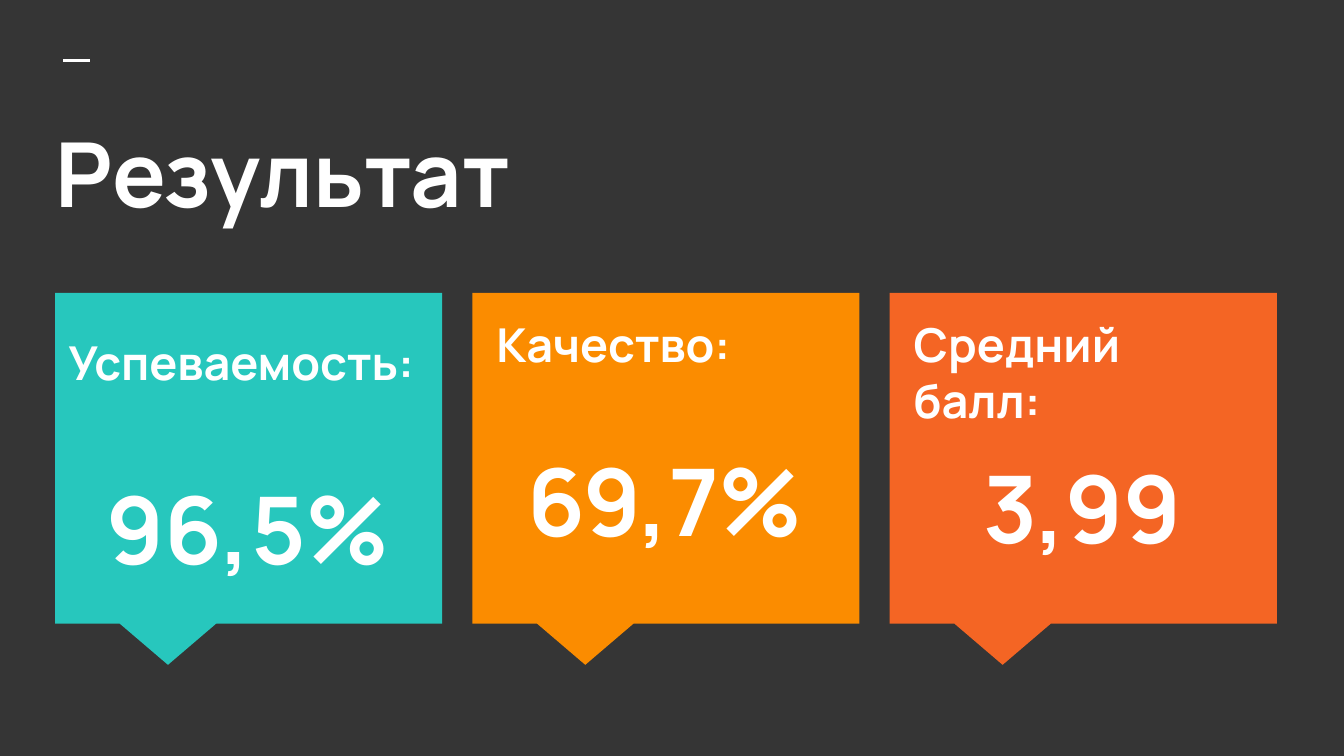
from dataclasses import dataclass

import pptx
import pptx.dml.color
import pptx.enum.shapes
import pptx.enum.text
import pptx.oxml
import pptx.oxml.ns
import pptx.util

Inches = pptx.util.Inches
Points = pptx.util.Pt
Align = pptx.enum.text.PP_ALIGN
Anchor = pptx.enum.text.MSO_ANCHOR


@dataclass(frozen=True)
class Theme:
    font: str = "Manrope"
    background: str = "353535"
    text: str = "FFFFFF"
    title_size: float = 48
    label_size: float = 25
    value_size: float = 50


@dataclass(frozen=True)
class Grid:
    """Row of equal cards between two edges, in inches."""
    left: float = 0.41
    right: float = 9.5
    top: float = 2.18
    width: float = 2.88
    height: float = 2.46
    columns: int = 3

    def column_left(self, column: int) -> float:
        pitch = (self.right - self.left - self.width) / (self.columns - 1)
        return self.left + column * pitch


@dataclass(frozen=True)
class Card:
    label: str
    value: str
    fill: str
    value_gap: float  # points between the label and the value
    text_in_callout: bool = False


THEME = Theme()
GRID = Grid()
CARDS = (
    Card("Успеваемость:", "96,5%", "27C7BD", 43.5, text_in_callout=True),
    Card("Качество:", "69,7%", "FB8C00", 38.5),
    Card("Средний балл:", "3,99", "F46524", 12),
)


def color(value: str) -> pptx.dml.color.RGBColor:
    return pptx.dml.color.RGBColor.from_string(value)


def prepare_frame(frame, anchor) -> None:
    frame.word_wrap = True
    frame.auto_size = pptx.enum.text.MSO_AUTO_SIZE.NONE
    frame.vertical_anchor = anchor
    frame.margin_left = frame.margin_right = Inches(0.1)
    frame.margin_top = frame.margin_bottom = Inches(0.1)


def write_paragraph(paragraph, text: str, size: float, alignment=Align.LEFT) -> None:
    paragraph.text = text
    paragraph.alignment = alignment
    paragraph.font.name = THEME.font
    paragraph.font.size = Points(size)
    paragraph.font.bold = True
    paragraph.font.color.rgb = color(THEME.text)


def draw_accent(slide) -> None:
    y = Inches(0.45)
    line = slide.shapes.add_connector(
        pptx.enum.shapes.MSO_CONNECTOR.STRAIGHT, Inches(0.47), y, Inches(0.67), y)
    line.line.color.rgb = color(THEME.text)
    line.line.width = Points(1.5)
    properties = line._element.find(pptx.oxml.ns.qn("p:spPr"))
    properties.append(pptx.oxml.parse_xml(
        f'<a:effectLst {pptx.oxml.ns.nsdecls("a")}/>'))


def draw_title(slide, text: str) -> None:
    title = slide.shapes.title
    title.left, title.top = Inches(0.31), Inches(0.78)
    title.width, title.height = Inches(9.43), Inches(1.12)
    prepare_frame(title.text_frame, Anchor.TOP)
    write_paragraph(title.text_frame.paragraphs[0], text, THEME.title_size)


def draw_card(slide, column: int, card: Card) -> None:
    left = GRID.column_left(column)
    callout = slide.shapes.add_shape(
        pptx.enum.shapes.MSO_SHAPE.RECTANGULAR_CALLOUT,
        Inches(left), Inches(GRID.top), Inches(GRID.width), Inches(GRID.height))
    callout.adjustments[0] = -5 / 24
    callout.adjustments[1] = 5 / 8
    callout.shadow.inherit = False
    callout.fill.solid()
    callout.fill.fore_color.rgb = color(card.fill)
    callout.line.fill.background()

    # Text sits in the callout itself or in a box inset from its corner
    if card.text_in_callout:
        frame, anchor = callout.text_frame, Anchor.MIDDLE
    else:
        box = slide.shapes.add_textbox(
            Inches(left + 0.08), Inches(GRID.top + 0.07), Inches(2.71), Inches(2.19))
        frame, anchor = box.text_frame, Anchor.TOP
    prepare_frame(frame, anchor)
    write_paragraph(frame.paragraphs[0], card.label, THEME.label_size)
    value = frame.add_paragraph()
    write_paragraph(value, card.value, THEME.value_size, Align.CENTER)
    value.space_before = Points(card.value_gap)


def main() -> None:
    presentation = pptx.Presentation()
    presentation.slide_width = Inches(10)
    presentation.slide_height = Inches(10 * 9 / 16)
    title_only = presentation.slide_layouts[5]
    slide = presentation.slides.add_slide(title_only)
    slide.background.fill.solid()
    slide.background.fill.fore_color.rgb = color(THEME.background)

    # Heading
    draw_accent(slide)
    draw_title(slide, "Результат")

    # Result cards
    for column, card in enumerate(CARDS):
        draw_card(slide, column, card)

    presentation.save("out.pptx")


if __name__ == "__main__":
    main()
